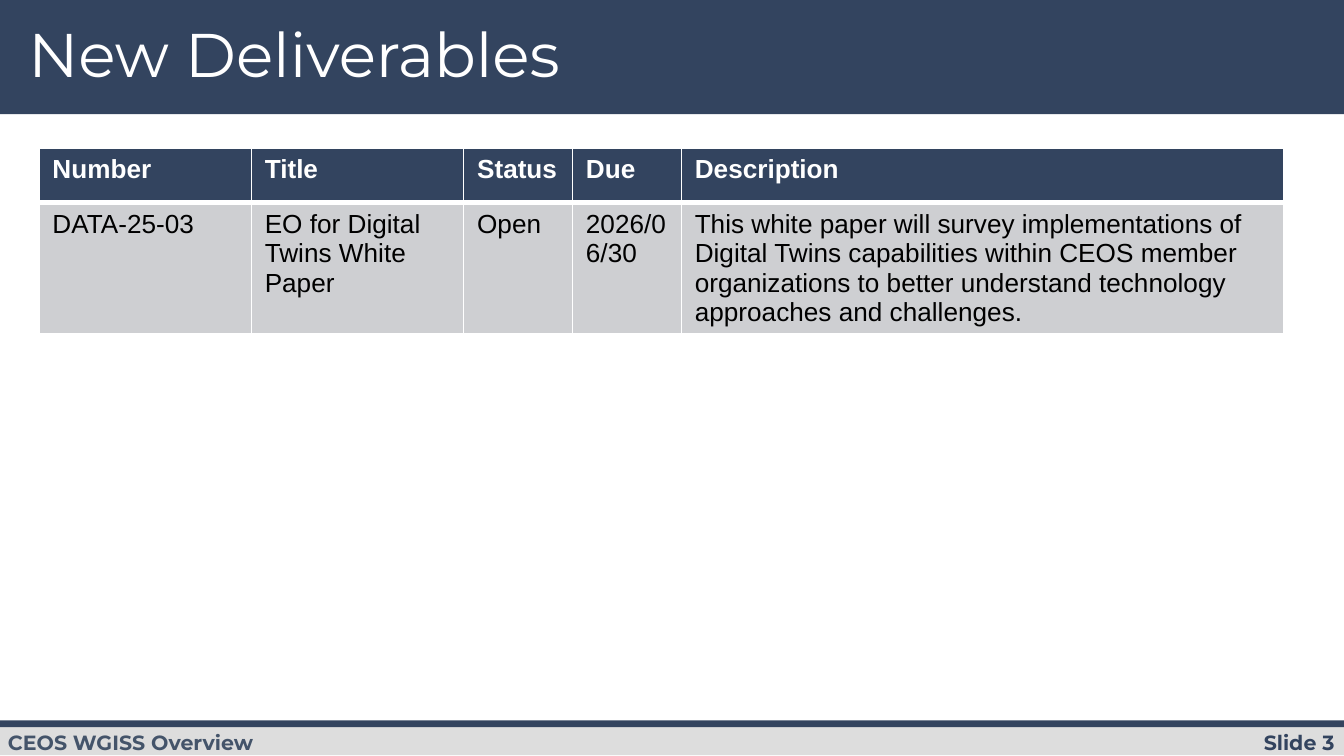
"""Build the New Deliverables slide with its banner, footer and table."""
from pptx import Presentation
from pptx.dml.color import RGBColor
from pptx.enum.shapes import MSO_SHAPE
from pptx.enum.text import MSO_ANCHOR, PP_ALIGN
from pptx.oxml import parse_xml
from pptx.oxml.ns import nsdecls
from pptx.util import Inches, Pt

NAVY = RGBColor(0x33, 0x44, 0x5F)
SLATE = RGBColor(0x44, 0x54, 0x6A)
SILVER = RGBColor(0xDD, 0xDD, 0xDD)
GRAY = RGBColor(0xCE, 0xCF, 0xD2)
WHITE = RGBColor(0xFF, 0xFF, 0xFF)
BLACK = RGBColor(0, 0, 0)

TITLE = "New Deliverables"
BANDS = [
    ((0, 0, 10, 0.85), NAVY),
    ((0, 5.39, 10, 0.23), SILVER),
    ((0, 5.36, 10, 0.05), NAVY),
]
FOOTERS = [
    ("Slide 3", (8.42, 5.39, 1.58, 0.26), (0.07, 0.04), PP_ALIGN.RIGHT, NAVY),
    ("CEOS WGISS Overview", (-0.04, 5.34, 3.16, 0.39), (0.1, 0.1), PP_ALIGN.LEFT, SLATE),
]
DELIVERABLES = [
    ("Number", "Title", "Status", "Due", "Description"),
    (
        "DATA-25-03",
        "EO for Digital Twins White Paper",
        "Open",
        "2026/06/30",
        "This white paper will survey implementations of Digital Twins capabilities "
        "within CEOS member organizations to better understand technology approaches "
        "and challenges.",
    ),
]
COLUMN_WIDTHS = [1.58, 1.58, 0.81, 0.81, 4.48]
ROW_HEIGHTS = [0.41, 0.96]
ROW_STYLES = [
    {"fill": NAVY, "color": WHITE, "bold": True, "bottom": 3},
    {"fill": GRAY, "color": BLACK, "bold": False, "bottom": 1},
]


def set_font(font, color, **values):
    font.color.rgb = color
    for name, value in values.items():
        setattr(font, name, value)


def set_frame(frame, insets):
    side, end = map(Inches, insets)
    values = {
        "margin_left": side, "margin_right": side,
        "margin_top": end, "margin_bottom": end,
        "word_wrap": True, "vertical_anchor": MSO_ANCHOR.TOP,
    }
    for name, value in values.items():
        setattr(frame, name, value)


def set_borders(cell, bottom):
    properties = cell._tc.get_or_add_tcPr()
    for edge, points in (("lnL", 1), ("lnR", 1), ("lnT", 1), ("lnB", bottom)):
        properties.append(parse_xml(
            f'<a:{edge} {nsdecls("a")} w="{Pt(points)}"><a:solidFill>'
            f'<a:srgbClr val="{WHITE}"/></a:solidFill></a:{edge}>'
        ))


def add_bands(slide):
    for box, color in BANDS:
        band = slide.shapes.add_shape(MSO_SHAPE.RECTANGLE, *map(Inches, box))
        band.shadow.inherit = False
        band.fill.solid()
        band.fill.fore_color.rgb = color
        band.line.fill.background()


def add_footers(slide):
    for text, box, insets, align, color in FOOTERS:
        frame = slide.shapes.add_textbox(*map(Inches, box)).text_frame
        set_frame(frame, insets)
        label = frame.paragraphs[0]
        label.text = text
        label.alignment = align
        set_font(label.font, color, name="Montserrat", size=Pt(11), bold=True)


def add_title(slide):
    title = slide.shapes.title
    slide.shapes._spTree.append(title._element)
    title.left, title.top, title.width, title.height = map(Inches, (0.14, 0.14, 7.7, 0.64))
    set_frame(title.text_frame, (0.07, 0.04))
    heading = title.text_frame.paragraphs[0]
    heading.text = TITLE
    heading.alignment = PP_ALIGN.LEFT
    heading.line_spacing = 0.9
    set_font(heading.font, WHITE, name="Montserrat", size=Pt(33), bold=False)


def add_deliverables(slide):
    table = slide.shapes.add_table(
        len(DELIVERABLES), len(COLUMN_WIDTHS), Inches(0.29), Inches(1.1),
        Inches(sum(COLUMN_WIDTHS)), Inches(sum(ROW_HEIGHTS)),
    ).table
    table.horz_banding = False
    for column, width in zip(table.columns, COLUMN_WIDTHS):
        column.width = Inches(width)
    for row, height, texts, style in zip(table.rows, ROW_HEIGHTS, DELIVERABLES, ROW_STYLES):
        row.height = Inches(height)
        for cell, text in zip(row.cells, texts):
            set_borders(cell, style["bottom"])
            cell.fill.solid()
            cell.fill.fore_color.rgb = style["fill"]
            cell.text = text
            set_font(cell.text_frame.paragraphs[0].font, style["color"],
                     name="Arial", size=Pt(14), bold=style["bold"])


def main():
    deck = Presentation()
    deck.slide_width = Inches(10)
    deck.slide_height = deck.slide_width * 9 // 16
    slide = deck.slides.add_slide(deck.slide_layouts[5])
    add_bands(slide)
    add_footers(slide)
    add_title(slide)
    add_deliverables(slide)
    deck.save("out.pptx")


if __name__ == "__main__":
    main()
